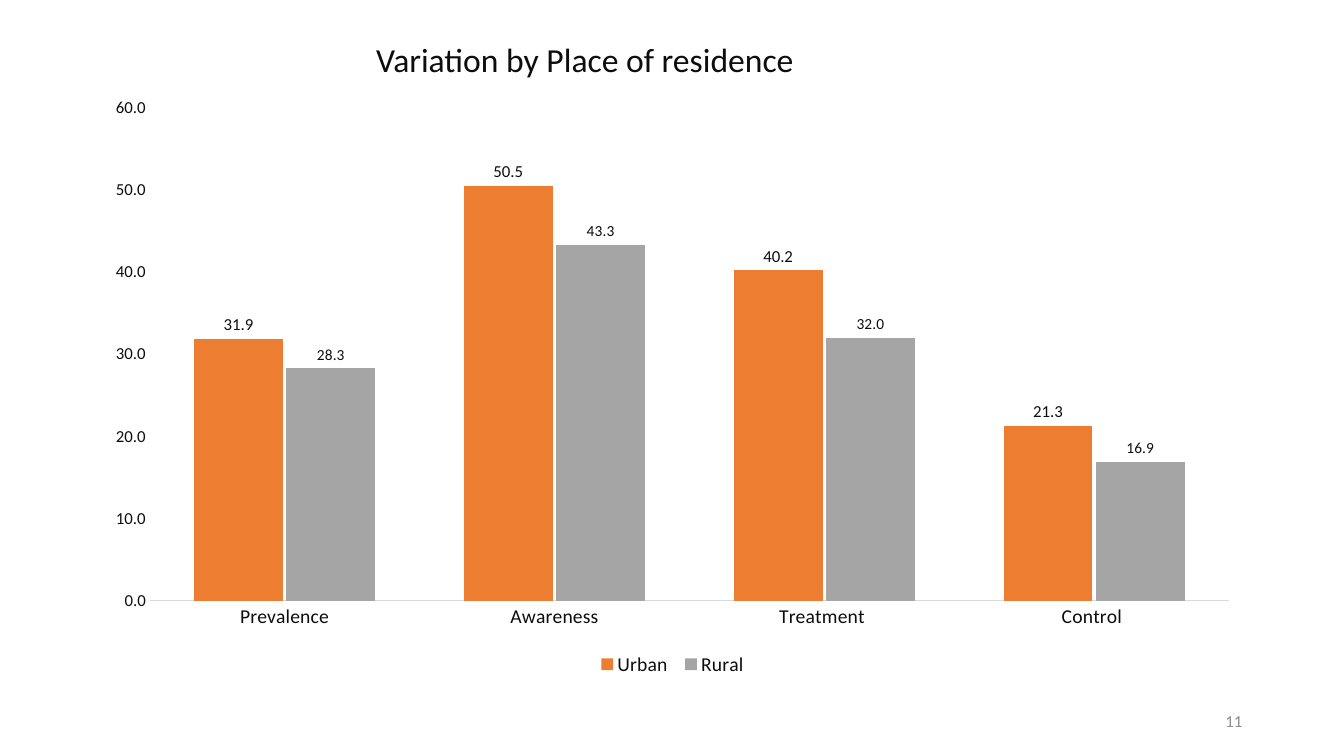
from pptx import Presentation
from pptx.chart.data import CategoryChartData
from pptx.dml.color import RGBColor
from pptx.enum.chart import XL_CHART_TYPE, XL_LABEL_POSITION, XL_LEGEND_POSITION, XL_TICK_MARK
from pptx.enum.text import MSO_ANCHOR, MSO_AUTO_SIZE, PP_ALIGN
from pptx.util import Inches, Pt

CLUSTERED = XL_CHART_TYPE.COLUMN_CLUSTERED
OUTSIDE_END = XL_LABEL_POSITION.OUTSIDE_END
BOTTOM = XL_LEGEND_POSITION.BOTTOM
NO_TICK = XL_TICK_MARK.NONE
TOP, MIDDLE = MSO_ANCHOR.TOP, MSO_ANCHOR.MIDDLE
LEFT, RIGHT = PP_ALIGN.LEFT, PP_ALIGN.RIGHT

BLACK = RGBColor(0x00, 0x00, 0x00)
INK = RGBColor(0x0D, 0x0D, 0x0D)
ORANGE = RGBColor(0xED, 0x7D, 0x31)
GREY = RGBColor(0xA5, 0xA5, 0xA5)
AXIS_GREY = RGBColor(0xD9, 0xD9, 0xD9)
NUMBER_GREY = RGBColor(0x8C, 0x8C, 0x8C)
FONT = "Calibri"
ONE_DECIMAL = "0.0"


def style_font(font, size, color=INK):
    for name, value in {"name": FONT, "size": Pt(size), "bold": False}.items():
        setattr(font, name, value)
    font.color.rgb = color


def write_line(box, text, size, color, align, anchor):
    frame = box.text_frame
    for name, value in {"word_wrap": True, "auto_size": MSO_AUTO_SIZE.NONE,
                        "vertical_anchor": anchor}.items():
        setattr(frame, name, value)
    para = frame.paragraphs[0]
    para.alignment = align
    span = para.add_run()
    span.text = text
    style_font(span.font, size, color)


deck = Presentation()
deck.slide_width, deck.slide_height = Inches(13.33), Inches(7.5)
page = deck.slides.add_slide(deck.slide_layouts.get_by_name("Title Only"))

# Slide number
number_box = page.shapes.add_textbox(Inches(9.42), Inches(6.95), Inches(3), Inches(0.4))
write_line(number_box, "11", 12, NUMBER_GREY, RIGHT, MIDDLE)

# Chart data
residence_data = CategoryChartData(number_format=ONE_DECIMAL)
residence_data.categories = ["Prevalence", "Awareness", "Treatment ", "Control "]
residence_data.add_series("Urban ", (31.9, 50.5, 40.2, 21.3))
residence_data.add_series("Rural", (28.3, 43.3, 32.0, 16.9))

# Clustered columns
chart = page.shapes.add_chart(CLUSTERED, Inches(0.92), Inches(0.85),
                              Inches(11.5), Inches(5.9), residence_data).chart
style_font(chart.font, 10, BLACK)
chart.has_title = False
plot = chart.plots[0]
for name, value in {"gap_width": 100, "overlap": -4, "vary_by_categories": False}.items():
    setattr(plot, name, value)

for series, color, label_size in zip(plot.series, (ORANGE, GREY), (12, 11)):
    series.format.fill.solid()
    series.format.fill.fore_color.rgb = color
    labels = series.data_labels
    for name, value in {"show_value": True, "number_format": ONE_DECIMAL,
                        "number_format_is_linked": False,
                        "position": OUTSIDE_END}.items():
        setattr(labels, name, value)
    style_font(labels.font, label_size)

# Axes
for axis, size in ((chart.category_axis, 14), (chart.value_axis, 12)):
    for name, value in {"major_tick_mark": NO_TICK, "minor_tick_mark": NO_TICK,
                        "has_major_gridlines": False}.items():
        setattr(axis, name, value)
    style_font(axis.tick_labels.font, size)
chart.category_axis.format.line.color.rgb = AXIS_GREY
chart.category_axis.format.line.width = Pt(0.75)
values = chart.value_axis
values.minimum_scale, values.maximum_scale, values.major_unit = 0, 60, 10
values.format.line.fill.background()
values.tick_labels.number_format = ONE_DECIMAL
values.tick_labels.number_format_is_linked = False

# Legend
chart.has_legend = True
chart.legend.position = BOTTOM
chart.legend.include_in_layout = False
style_font(chart.legend.font, 14)

# Title
title = page.shapes.title
for name, value in {"left": 3.63, "top": 0.34, "width": 5.55, "height": 0.5}.items():
    setattr(title, name, Inches(value))
write_line(title, "Variation by Place of residence", 24, INK, LEFT, TOP)

deck.save("out.pptx")
